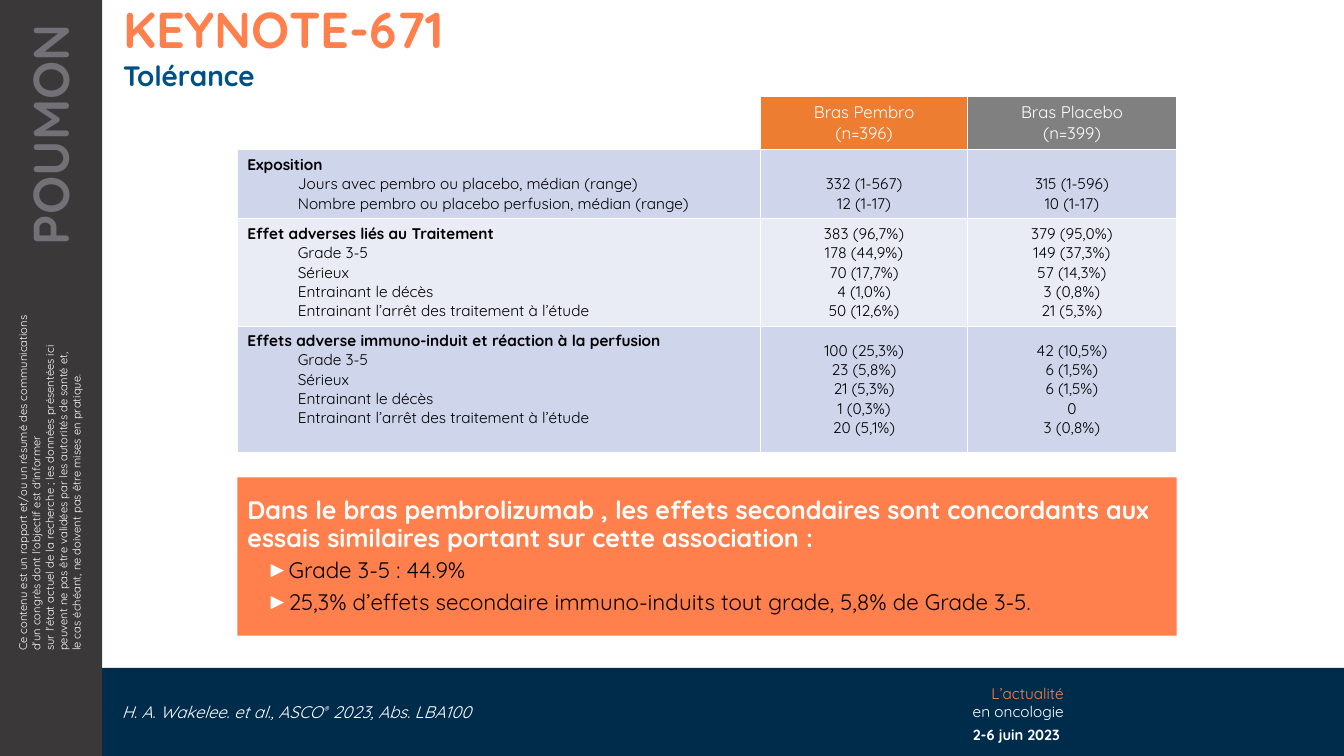
from lxml.etree import SubElement
from pptx import Presentation
from pptx.dml.color import RGBColor
from pptx.enum.shapes import MSO_SHAPE
from pptx.enum.text import MSO_ANCHOR, MSO_AUTO_SIZE, PP_ALIGN
from pptx.oxml.ns import qn
from pptx.util import Pt

WHITE = RGBColor(0xFF, 0xFF, 0xFF)
BLACK = RGBColor(0x00, 0x00, 0x00)
CORAL = RGBColor(0xFF, 0x7F, 0x4D)
NAVY = RGBColor(0x00, 0x2C, 0x4C)
BLUE = RGBColor(0x00, 0x50, 0x86)
CHARCOAL = RGBColor(0x3A, 0x38, 0x39)
MAUVE = RGBColor(0x73, 0x70, 0x78)
ORANGE = RGBColor(0xED, 0x7D, 0x31)
GREY = RGBColor(0x80, 0x80, 0x80)
BAND_DARK = RGBColor(0xCF, 0xD5, 0xEA)
BAND_LIGHT = RGBColor(0xE9, 0xEB, 0xF5)
FONT = "Quicksand"
LINE_HEIGHT = 13.75

DISCLAIMER = (
    "Ce contenu est un rapport et/ou un résumé des communications d'un congrès dont l'objectif est d'informer\v"
    "sur l'état actuel de la recherche ; les données présentées ici peuvent ne pas être validées "
    "par les autorités de santé et,\v"
    "le cas échéant, ne doivent pas être mises en pratique."
)
GRADES = ["Grade 3-5", "Sérieux", "Entrainant le décès", "Entrainant l’arrêt des traitement à l’étude"]
HEADERS = [(["Bras Pembro", "(n=396)"], ORANGE), (["Bras Placebo", "(n=399)"], GREY)]
SECTIONS = [
    (["Exposition", "Jours avec pembro ou placebo, médian (range)",
      "Nombre pembro ou placebo perfusion, médian (range)"],
     ["332 (1-567)", "12 (1-17)"], ["315 (1-596)", "10 (1-17)"], BAND_DARK),
    (["Effet adverses liés au Traitement", *GRADES],
     ["383 (96,7%)", "178 (44,9%)", "70 (17,7%)", "4 (1,0%)", "50 (12,6%)"],
     ["379 (95,0%)", "149 (37,3%)", "57 (14,3%)", "3 (0,8%)", "21 (5,3%)"], BAND_LIGHT),
    (["Effets adverse immuno-induit et réaction à la perfusion", *GRADES],
     ["100 (25,3%)", "23 (5,8%)", "21 (5,3%)", "1 (0,3%)", "20 (5,1%)"],
     ["42 (10,5%)", "6 (1,5%)", "6 (1,5%)", "0", "3 (0,8%)"], BAND_DARK),
]
CALLOUT = [
    "Dans le bras pembrolizumab , les effets secondaires sont concordants aux essais similaires "
    "portant sur cette association :",
    "Grade 3-5 : 44.9%",
    "25,3% d’effets secondaire immuno-induits tout grade, 5,8% de Grade 3-5.",
]


def apply(target, values):
    """Set each attribute named in a dict."""
    for name, value in values.items():
        setattr(target, name, value)


def style_font(font, size, color, **values):
    """Format a font with the slide typeface."""
    apply(font, {"name": FONT, "size": Pt(size), **values})
    font.color.rgb = color


def place(shape, box):
    """Move a shape to a box in points."""
    apply(shape, dict(zip(("left", "top", "width", "height"), map(Pt, box))))


def set_frame(frame, **values):
    """Make a text frame wrap at a fixed size."""
    apply(frame, {"word_wrap": True, "auto_size": MSO_AUTO_SIZE.NONE,
                  "vertical_anchor": MSO_ANCHOR.TOP, **values})


def set_indent(paragraph, left, first=0, bullet=None):
    """Set the indents of a paragraph and its bullet, if any."""
    properties = paragraph._p.get_or_add_pPr()
    properties.set("marL", str(Pt(left)))
    properties.set("indent", str(Pt(first)))
    if bullet:
        color = SubElement(properties, qn("a:buClr"))
        SubElement(color, qn("a:srgbClr"), val=str(WHITE))
        SubElement(properties, qn("a:buFont"), typeface="Arial")
        SubElement(properties, qn("a:buChar"), char=bullet)
    else:
        SubElement(properties, qn("a:buNone"))


def add_text(slide, box, lines, align=PP_ALIGN.LEFT, rotation=0, **frame_values):
    """Add a text box of (text, size, color, font values) lines."""
    shape = slide.shapes.add_textbox(*map(Pt, box))
    shape.rotation = rotation
    set_frame(shape.text_frame, **frame_values)
    for index, (text, size, color, values) in enumerate(lines):
        paragraph = shape.text_frame.paragraphs[0] if index == 0 else shape.text_frame.add_paragraph()
        apply(paragraph, {"text": text, "alignment": align})
        for run in paragraph.runs:
            style_font(run.font, size, color, **values)
    return shape


def add_panel(slide, box, color):
    """Add a plain filled rectangle."""
    panel = slide.shapes.add_shape(MSO_SHAPE.RECTANGLE, *map(Pt, box))
    panel.shadow.inherit = False
    panel.fill.solid()
    panel.fill.fore_color.rgb = color
    panel.line.fill.background()


def add_sidebar(slide, box):
    """Draw the side band with its two vertical texts."""
    left, top, width, height = box
    add_panel(slide, box, CHARCOAL)
    center = left + width / 2 - 1
    texts = [
        (110.5, 221, 51, ("POUMON", 36, MAUVE, {"bold": True}), PP_ALIGN.RIGHT, 17.3),
        (342.4, 259, 55.4, (DISCLAIMER, 8, WHITE, {}), PP_ALIGN.LEFT, 7.2),
    ]
    for middle, length, depth, line, align, inset in texts:
        text_box = (center - length / 2, top + middle - depth / 2, length, depth)
        add_text(slide, text_box, [line], align, 270, margin_right=Pt(inset))


def add_footer(slide, box):
    """Draw the footer band with the citation and the event."""
    left, top, width, height = box
    add_panel(slide, box, NAVY)
    citation = add_text(slide, (left + 7, top + 22.5, 406, 19), [])
    paragraph = citation.text_frame.paragraphs[0]
    paragraph.line_spacing = 0.9
    for text, baseline in [("H. A. Wakelee. et al., ASCO", 0), ("®", 30000), (" 2023, Abs. LBA100", 0)]:
        run = paragraph.add_run()
        run.text = text
        style_font(run.font, 12, WHITE, italic=True)
        run._r.get_or_add_rPr().set("baseline", str(baseline))
    add_text(slide, (left + 576, top + 8, 118, 34),
             [("L’actualité", 11, CORAL, {}), ("en oncologie", 11, WHITE, {})], PP_ALIGN.RIGHT)
    date = add_text(slide, (left + 576, top + 39, 111, 19),
                    [("2-6 juin 2023", 10.5, WHITE, {"bold": True})], PP_ALIGN.RIGHT, margin_right=Pt(3))
    date.text_frame.paragraphs[0].line_spacing = 0.9


def add_heading(slide, box):
    """Fill the title and add the subtitle under it."""
    left, top, width, height = box
    title = slide.shapes.title
    place(title, (left, top, width, 41))
    set_frame(title.text_frame, margin_left=Pt(14.4))
    paragraph = title.text_frame.paragraphs[0]
    apply(paragraph, {"text": "KEYNOTE-671", "alignment": PP_ALIGN.LEFT, "line_spacing": 0.9})
    style_font(paragraph.runs[0].font, 36, CORAL, bold=True)
    subtitle = add_text(slide, (left, top + 41, width, height - 41),
                        [("Tolérance", 20, BLUE, {"bold": True})], margin_left=Pt(14.4))
    subtitle.text_frame.paragraphs[0].line_spacing = 0.9


def fill_cell(cell, lines, color, size, text_color, is_label=False):
    """Write a table cell with its fill and white borders."""
    properties = cell._tc.get_or_add_tcPr()
    for side in ("lnL", "lnR", "lnT", "lnB"):
        line = SubElement(properties, qn(f"a:{side}"), w=str(Pt(1)))
        SubElement(SubElement(line, qn("a:solidFill")), qn("a:srgbClr"), val=str(WHITE))
    cell.vertical_anchor = MSO_ANCHOR.MIDDLE
    if color is None:
        cell.fill.background()
    else:
        cell.fill.solid()
        cell.fill.fore_color.rgb = color
    cell.text = "\n".join(lines)
    for index, paragraph in enumerate(cell.text_frame.paragraphs):
        paragraph.alignment = PP_ALIGN.LEFT if is_label else PP_ALIGN.CENTER
        if is_label and index:
            set_indent(paragraph, 36)
        style_font(paragraph.font, size, text_color, bold=is_label and index == 0)
        for run in paragraph.runs:
            style_font(run.font, size, text_color, bold=is_label and index == 0)


def add_tolerance_table(slide, box):
    """Draw the table of exposure and adverse effects."""
    table = slide.shapes.add_table(4, 3, *map(Pt, box)).table
    apply(table, {"first_row": False, "horz_banding": False})
    for column, width in zip(table.columns, (374, 147.5, 149.5)):
        column.width = Pt(width)
    for row, height in zip(table.rows, (38, 49, 77, 90)):
        row.height = Pt(height)
    fill_cell(table.cell(0, 0), [], None, 12, WHITE)
    for column, (lines, color) in enumerate(HEADERS, 1):
        fill_cell(table.cell(0, column), lines, color, 12, WHITE)
    for row, (labels, pembro, placebo, color) in enumerate(SECTIONS, 1):
        for column, lines in enumerate((labels, pembro, placebo)):
            cell = table.cell(row, column)
            fill_cell(cell, lines, color, 11, BLACK, column == 0)
            cell.margin_top = Pt(3.6 + LINE_HEIGHT * (len(labels) - len(lines)))
    table.cell(3, 0).margin_bottom = Pt(3.6 + LINE_HEIGHT)


def add_callout(slide, box):
    """Fill the body placeholder with the conclusion."""
    body = slide.placeholders[1]
    place(body, box)
    body.fill.solid()
    body.fill.fore_color.rgb = CORAL
    set_frame(body.text_frame, vertical_anchor=MSO_ANCHOR.MIDDLE)
    body.text_frame.text = "\n".join(CALLOUT)
    for index, paragraph in enumerate(body.text_frame.paragraphs):
        is_point = index > 0
        set_indent(paragraph, *((28, -14.4, "►") if is_point else (0,)))
        apply(paragraph, {"level": int(is_point), "line_spacing": 0.9, "space_before": Pt(5 * is_point)})
        style_font(paragraph.runs[0].font, 16 if is_point else 18,
                   BLACK if is_point else WHITE, bold=not is_point)


def main():
    """Build and save the slide."""
    presentation = Presentation()
    apply(presentation, {"slide_width": Pt(960), "slide_height": Pt(540)})
    slide = presentation.slides.add_slide(presentation.slide_layouts[1])
    add_footer(slide, (73, 477, 887, 63))
    add_sidebar(slide, (0, 0, 73, 540))
    add_heading(slide, (73.5, 0, 886.5, 68))
    add_tolerance_table(slide, (169.5, 69, 671, 254))
    add_callout(slide, (169.5, 341, 671, 113))
    presentation.save("out.pptx")


if __name__ == "__main__":
    main()
